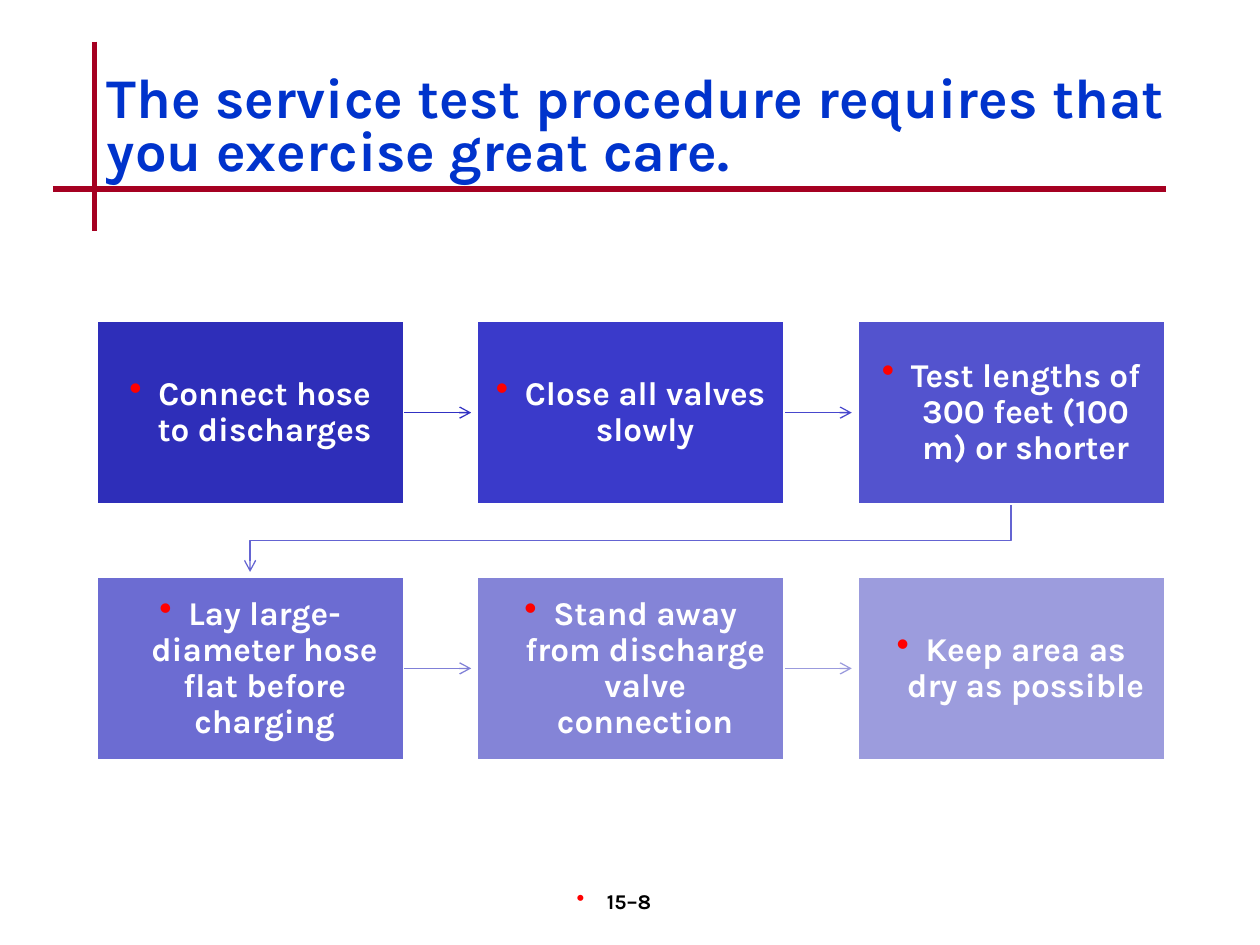
from dataclasses import dataclass

from lxml import etree
from pptx import Presentation
from pptx import util as u
from pptx.dml.color import RGBColor
from pptx.enum import shapes, text
from pptx.oxml import ns


@dataclass(frozen=True)
class Theme:
    font: str = "Karla"
    title: str = "0033CC"
    rule: str = "A50021"
    bullet: str = "FF0000"
    light: str = "FFFFFF"
    dark: str = "000000"
    title_size: int = 32
    step_size: int = 19
    footer_size: int = 12
    rule_width: float = 3
    border_width: float = 2
    arrow_width: float = 0.75


STEPS = [
    ("Connect hose to discharges", "2E2EB9"),
    ("Close all valves slowly", "3A3ACA"),
    ("Test lengths of 300 feet (100 m) or shorter", "5353CE"),
    ("Lay large-diameter hose flat before charging", "6C6CD2"),
    ("Stand away from discharge valve connection", "8484D7"),
    ("Keep area as dry as possible", "9C9CDD"),
]
ARROW_COLORS = ["3131C3", "4747CD", "6464D2", "8080D7", "9B9BDD"]
COLUMNS = 3
LEFT, TOP = 0.76, 2.54
STEP_WIDTH, STEP_HEIGHT = 2.45, 1.47
COLUMN_PITCH, ROW_PITCH = 3.02, 2.03
ARROW_LENGTH = 0.53


class SlideBuilder:
    def __init__(self, page, theme):
        self.page = page
        self.theme = theme

    def stroke(self, line, color, width, arrow=False):
        line.color.rgb = RGBColor.from_string(color)
        line.width = u.Pt(width)
        if arrow:
            etree.SubElement(line._get_or_add_ln(), ns.qn("a:tailEnd"), type="arrow")

    def set_text(self, box, words, size, color, align=None, spacing=None,
                 bullet_indents=None, anchor=text.MSO_ANCHOR.TOP):
        """Fill a box with one paragraph; bullet_indents is (margin, hanging)."""
        frame = box.text_frame
        frame.word_wrap = True
        frame.vertical_anchor = anchor
        para = frame.paragraphs[0]
        para.text = words
        para.alignment = align
        para.line_spacing = spacing
        if bullet_indents:
            self.add_bullet(para, *bullet_indents)
        para.font.name = self.theme.font
        para.font.size = u.Pt(size)
        para.font.bold = True
        para.font.color.rgb = RGBColor.from_string(color)

    def add_bullet(self, para, margin, hanging):
        properties = para._p.get_or_add_pPr()
        properties.set("marL", str(u.Inches(margin)))
        properties.set("indent", str(-u.Inches(hanging)))
        color = etree.SubElement(properties, ns.qn("a:buClr"))
        etree.SubElement(color, ns.qn("a:srgbClr"), val=self.theme.bullet)
        etree.SubElement(properties, ns.qn("a:buSzPct"), val="110000")
        etree.SubElement(properties, ns.qn("a:buChar"), char="•")

    def text_box(self, left, top, width, height, words, size, color, **style):
        box = self.page.shapes.add_textbox(
            u.Inches(left), u.Inches(top), u.Inches(width), u.Inches(height))
        self.set_text(box, words, size, color, **style)

    def line(self, start, end, color, width, arrow=False):
        connector = self.page.shapes.add_connector(
            shapes.MSO_CONNECTOR.STRAIGHT, *map(u.Inches, start + end))
        self.stroke(connector.line, color, width, arrow)
        etree.SubElement(connector._element.spPr, ns.qn("a:effectLst"))
        return connector

    def bent_arrow(self, points, color):
        first, *others = [(u.Inches(x), u.Inches(y)) for x, y in points]
        builder = self.page.shapes.build_freeform(*first)
        builder.add_line_segments(others, close=False)
        outline = builder.convert_to_shape()
        outline.shadow.inherit = False
        outline.fill.background()
        self.stroke(outline.line, color, self.theme.arrow_width, arrow=True)

    def step(self, left, top, words, fill):
        box = self.page.shapes.add_shape(
            shapes.MSO_SHAPE.RECTANGLE, u.Inches(left), u.Inches(top),
            u.Inches(STEP_WIDTH), u.Inches(STEP_HEIGHT))
        box.shadow.inherit = False
        box.fill.solid()
        box.fill.fore_color.rgb = RGBColor.from_string(fill)
        self.stroke(box.line, self.theme.light, self.theme.border_width)
        frame = box.text_frame
        frame.margin_left = frame.margin_right = u.Inches(0.15)
        frame.margin_top = frame.margin_bottom = u.Inches(0.15)
        self.set_text(box, words, self.theme.step_size, self.theme.light,
                      align=text.PP_ALIGN.CENTER, spacing=0.9,
                      bullet_indents=(0.23, 0.23), anchor=text.MSO_ANCHOR.MIDDLE)
        return box


def step_position(index):
    row, column = divmod(index, COLUMNS)
    return LEFT + column * COLUMN_PITCH, TOP + row * ROW_PITCH


def add_process(slide):
    boxes = [slide.step(*step_position(index), words, fill)
             for index, (words, fill) in enumerate(STEPS)]
    for index, color in enumerate(ARROW_COLORS):
        left, top = step_position(index)
        if (index + 1) % COLUMNS:
            x, y = left + STEP_WIDTH, top + STEP_HEIGHT / 2
            arrow = slide.line((x, y), (x + ARROW_LENGTH, y), color,
                               slide.theme.arrow_width, arrow=True)
            arrow.begin_connect(boxes[index], 3)
        else:
            start_x, start_y = left + STEP_WIDTH / 2, top + STEP_HEIGHT
            end_x = LEFT + STEP_WIDTH / 2
            bend_y = start_y + 0.28
            slide.bent_arrow([(start_x, start_y), (start_x, bend_y),
                              (end_x, bend_y), (end_x, start_y + ARROW_LENGTH)], color)


def main():
    deck = Presentation()
    deck.slide_width, deck.slide_height = u.Inches(10), u.Inches(7.5)
    theme = Theme()
    slide = SlideBuilder(deck.slides.add_slide(deck.slide_layouts[6]), theme)

    slide.line((0.75, 0.33), (0.75, 1.83), theme.rule, theme.rule_width)
    slide.line((0.42, 1.5), (9.25, 1.5), theme.rule, theme.rule_width)
    add_process(slide)
    slide.text_box(0.75, 0.5, 8.92, 1,
                   "The service test procedure requires that you exercise great care.",
                   theme.title_size, theme.title, spacing=0.8,
                   anchor=text.MSO_ANCHOR.BOTTOM)
    slide.text_box(3.92, 7, 2.08, 0.5, "15–8", theme.footer_size, theme.dark,
                   align=text.PP_ALIGN.CENTER, bullet_indents=(0.06, 0.24))
    deck.save("out.pptx")


if __name__ == "__main__":
    main()
